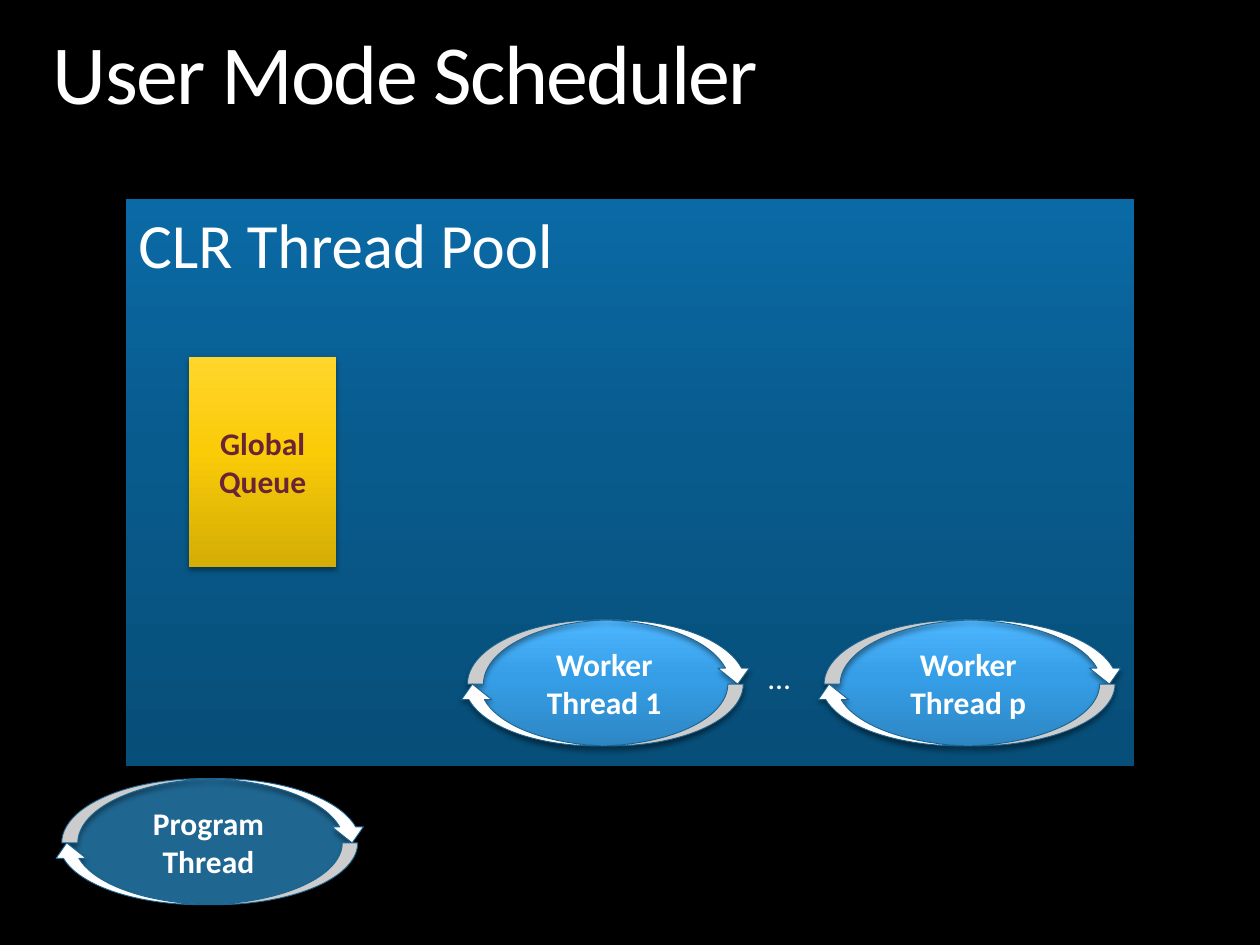
from copy import deepcopy
from dataclasses import dataclass

from lxml import etree
from pptx import Presentation
from pptx import util as u
from pptx.dml.color import RGBColor
from pptx.enum import shapes, text
from pptx.oxml.ns import qn

Inches = u.Inches


@dataclass(frozen=True)
class Theme:
    font: str = "Calibri"
    background: str = "000000"
    light: str = "FFFFFF"
    queue_text: str = "6A2433"
    program: str = "1F6691"
    arrow_line: str = "1C6491"
    # Gradients run from bottom to top
    pool: tuple = ("074E78", "085B8D", "0A6AA5")
    queue: tuple = ("D4AD06", "FACB07", "FFD62C")
    worker: tuple = ("2D87C4", "369EE7", "4CB6FF")
    grad_positions: tuple = (0, 0.55, 1)
    title_size: int = 48
    pool_size: int = 36
    label_size: int = 18


THEME = Theme()


def rgb(value):
    return RGBColor.from_string(value)


def paint(shape, fill):
    """Fill with one colour or a three-stop vertical gradient."""
    if isinstance(fill, str):
        shape.fill.solid()
        shape.fill.fore_color.rgb = rgb(fill)
        return
    shape.fill.gradient()
    shape.fill.gradient_angle = 90
    stop_list = shape._element.spPr.find(".//" + qn("a:gsLst"))
    stop_list.append(deepcopy(stop_list[0]))
    for stop, position, color in zip(shape.fill.gradient_stops, THEME.grad_positions, fill):
        stop.position = position
        stop.color.rgb = rgb(color)


def add_shadow(shape, blur):
    shape.shadow.inherit = False
    effects = shape._element.spPr.find(qn("a:effectLst"))
    outer = etree.SubElement(effects, qn("a:outerShdw"), blurRad=str(int(u.Pt(blur))),
                             dist=str(int(u.Pt(2))), dir="5400000",
                             algn="ctr", rotWithShape="0")
    color = etree.SubElement(outer, qn("a:srgbClr"), val="000000")
    etree.SubElement(color, qn("a:alpha"), val="38000")


def add_block(parent, kind, box, fill, blur=3.1):
    block = parent.add_shape(kind, *map(Inches, box))
    paint(block, fill)
    block.line.fill.background()
    add_shadow(block, blur)
    return block


def write(frame, lines, size, color=THEME.light, bold=False, align=None):
    for index, line in enumerate(lines):
        paragraph = frame.paragraphs[0] if index == 0 else frame.add_paragraph()
        paragraph.alignment = align
        run = paragraph.add_run()
        run.text = line
        run.font.name = THEME.font
        run.font.size = u.Pt(size)
        run.font.bold = bold
        run.font.color.rgb = rgb(color)


def write_label(block, lines, color=THEME.light):
    block.text_frame.vertical_anchor = text.MSO_ANCHOR.MIDDLE
    write(block.text_frame, lines, THEME.label_size, color, True, text.PP_ALIGN.CENTER)


def add_title(slide, box):
    title = slide.shapes.title
    title.left, title.top, title.width, title.height = map(Inches, box)
    frame = title.text_frame
    frame.margin_left = frame.margin_right = frame.margin_top = frame.margin_bottom = 0
    frame.word_wrap = True
    frame.auto_size = text.MSO_AUTO_SIZE.SHAPE_TO_FIT_TEXT
    frame.vertical_anchor = text.MSO_ANCHOR.TOP
    write(frame, ["User Mode Scheduler"], THEME.title_size, align=text.PP_ALIGN.LEFT)
    heading = frame.paragraphs[0]
    heading.line_spacing = 0.9
    heading.runs[0].font._element.set("spc", "-100")


def add_thread(slide, box, label, fill, blur=3.1):
    oval = add_block(slide.shapes, shapes.MSO_SHAPE.OVAL, box, fill, blur)
    write_label(oval, [label])


def add_cycle(parent, box):
    """Two curved arrows circling the thread that fills the box."""
    left, top, width, _ = box
    span = width + 0.18
    upper = (left - 0.04, top, span, 0.51)
    lower = (left - 0.12, top + 0.51, span, 0.49)
    for arrow_box, flipped in ((upper, False), (lower, True)):
        arrow = add_block(parent, shapes.MSO_SHAPE.CURVED_DOWN_ARROW, arrow_box, THEME.light)
        for index, value in enumerate((0.25, 0.489, 0.25)):
            arrow.adjustments[index] = value
        arrow.line.color.rgb = rgb(THEME.arrow_line)
        arrow.line.width = u.Pt(0.5)
        if flipped:
            frame = arrow._element.spPr.find(qn("a:xfrm"))
            frame.set("flipH", "1")
            frame.set("flipV", "1")


def add_pool(slide, box):
    left, top, width, height = box
    pool = add_block(slide.shapes, shapes.MSO_SHAPE.RECTANGLE, box, THEME.pool)
    pool.text_frame.vertical_anchor = text.MSO_ANCHOR.TOP
    write(pool.text_frame, ["CLR Thread Pool"], THEME.pool_size, align=text.PP_ALIGN.LEFT)

    # Shared queue
    queue = add_block(slide.shapes, shapes.MSO_SHAPE.RECTANGLE,
                      (left + 0.5, top + 1.25, 1.17, 1.67), THEME.queue)
    write_label(queue, ["Global", "Queue"], THEME.queue_text)

    # Workers along the bottom, with an ellipsis between them
    worker_top = top + height - 1.16
    workers = {"Worker Thread 1": (left + 2.75, worker_top, 2.09, 1),
               "Worker Thread p": (left + 5.58, worker_top, 2.21, 1)}
    for label, worker_box in workers.items():
        add_thread(slide, worker_box, label, THEME.worker)
    more = slide.shapes.add_textbox(*map(Inches, (left + 5, worker_top + 0.25, 0.5, 0.4)))
    more.text_frame.word_wrap = True
    more.text_frame.auto_size = text.MSO_AUTO_SIZE.SHAPE_TO_FIT_TEXT
    write(more.text_frame, ["…"], THEME.label_size)
    for worker_box in workers.values():
        add_cycle(slide.shapes.add_group_shape().shapes, worker_box)


def main():
    deck = Presentation()
    deck.slide_width, deck.slide_height = Inches(10), Inches(7.5)
    slide = deck.slides.add_slide(deck.slide_layouts[5])
    slide.background.fill.solid()
    slide.background.fill.fore_color.rgb = rgb(THEME.background)

    program_box = (0.53, 6.18, 2.25, 1)
    add_title(slide, (0.42, 0.25, 9.58, 0.73))
    add_thread(slide, program_box, "Program Thread", THEME.program, blur=3.5)
    add_pool(slide, (1, 1.58, 8, 4.5))
    add_cycle(slide.shapes, program_box)
    deck.save("out.pptx")


if __name__ == "__main__":
    main()
